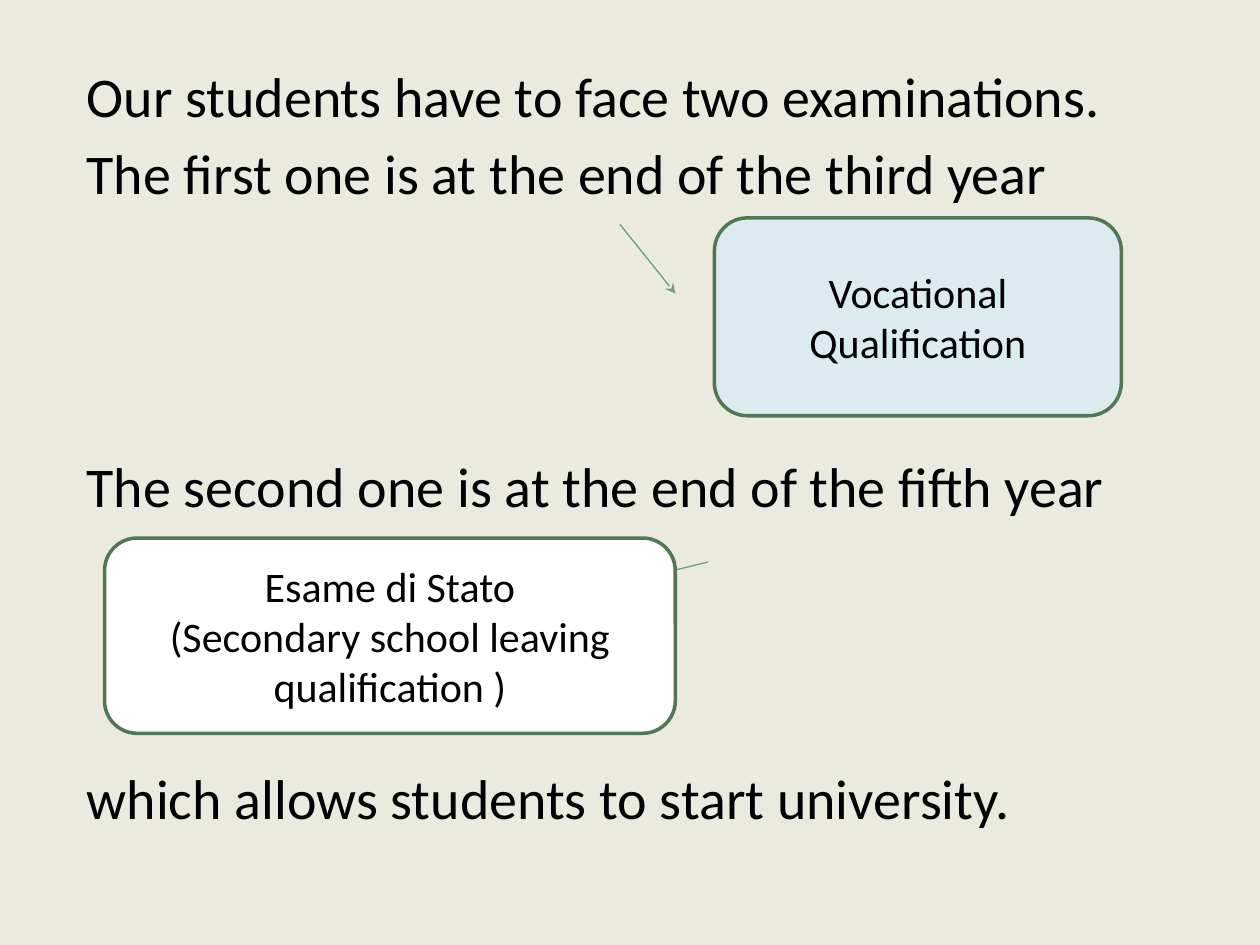
from dataclasses import dataclass

from lxml import etree
from pptx import Presentation
from pptx.dml.color import RGBColor
from pptx.enum.shapes import MSO_CONNECTOR, MSO_SHAPE
from pptx.enum.text import MSO_ANCHOR, PP_ALIGN
from pptx.oxml.ns import qn
from pptx.util import Inches, Pt

STRAIGHT = MSO_CONNECTOR.STRAIGHT
ROUNDED = MSO_SHAPE.ROUNDED_RECTANGLE
MIDDLE = MSO_ANCHOR.MIDDLE
CENTER = PP_ALIGN.CENTER


@dataclass(frozen=True)
class Theme:
    font: str = "Calibri"
    background: RGBColor = RGBColor.from_string("EAEBDE")
    text: RGBColor = RGBColor.from_string("000000")
    arrow: RGBColor = RGBColor.from_string("6EA072")
    border: RGBColor = RGBColor.from_string("527755")
    blue: RGBColor = RGBColor.from_string("DCEBEF")
    white: RGBColor = RGBColor.from_string("FFFFFF")
    body_size: Pt = Pt(32)
    box_size: Pt = Pt(24)


theme = Theme()


def format_runs(paragraph, size):
    for run in paragraph.runs:
        run.font.name = theme.font
        run.font.size = size
        run.font.color.rgb = theme.text


presentation = Presentation()
presentation.slide_width = Inches(10)
presentation.slide_height = Inches(7.5)
slide = presentation.slides.add_slide(presentation.slide_layouts[6])
slide.background.fill.solid()
slide.background.fill.fore_color.rgb = theme.background

# Sentences, with gaps left for the two qualification boxes
LINE_GAP = 5.7
BOX_GAP = 140
sentences = [
    ("Our students have to face two examinations.", 0),
    ("The first one is at the end of the third year", LINE_GAP),
    ("The second one is at the end of the fifth year", BOX_GAP),
    ("which allows students to start university.", BOX_GAP),
]
body = slide.shapes.add_textbox(Inches(0.59), Inches(0.44), Inches(9), Inches(6.06))
body.text_frame.word_wrap = True
body.text_frame.text = "\n".join(sentence for sentence, _ in sentences)
for paragraph, (_, gap) in zip(body.text_frame.paragraphs, sentences):
    paragraph.space_before = Pt(gap)
    format_runs(paragraph, theme.body_size)

# Arrows from the sentences to the boxes
arrows = [(4.92, 1.78, 5.36, 2.33), (5.62, 4.46, 4.69, 4.69)]
for ends in arrows:
    arrow = slide.shapes.add_connector(STRAIGHT, *map(Inches, ends))
    arrow.line.color.rgb = theme.arrow
    arrow.line.width = Pt(0.75)
    etree.SubElement(arrow.line._get_or_add_ln(), qn("a:tailEnd"), type="stealth")
    etree.SubElement(arrow._element.spPr, qn("a:effectLst"))

# Qualification boxes
boxes = [
    ((5.67, 1.73, 3.23, 1.57), theme.blue, "Vocational Qualification"),
    ((0.83, 4.27, 4.53, 1.55), theme.white,
     "Esame di Stato\n(Secondary school leaving qualification )"),
]
for bounds, fill, text in boxes:
    box = slide.shapes.add_shape(ROUNDED, *map(Inches, bounds))
    box.shadow.inherit = False
    box.fill.solid()
    box.fill.fore_color.rgb = fill
    box.line.color.rgb = theme.border
    box.line.width = Pt(2)
    box.text_frame.word_wrap = True
    box.text_frame.vertical_anchor = MIDDLE
    box.text_frame.text = text
    for paragraph in box.text_frame.paragraphs:
        paragraph.alignment = CENTER
        format_runs(paragraph, theme.box_size)

presentation.save("out.pptx")
